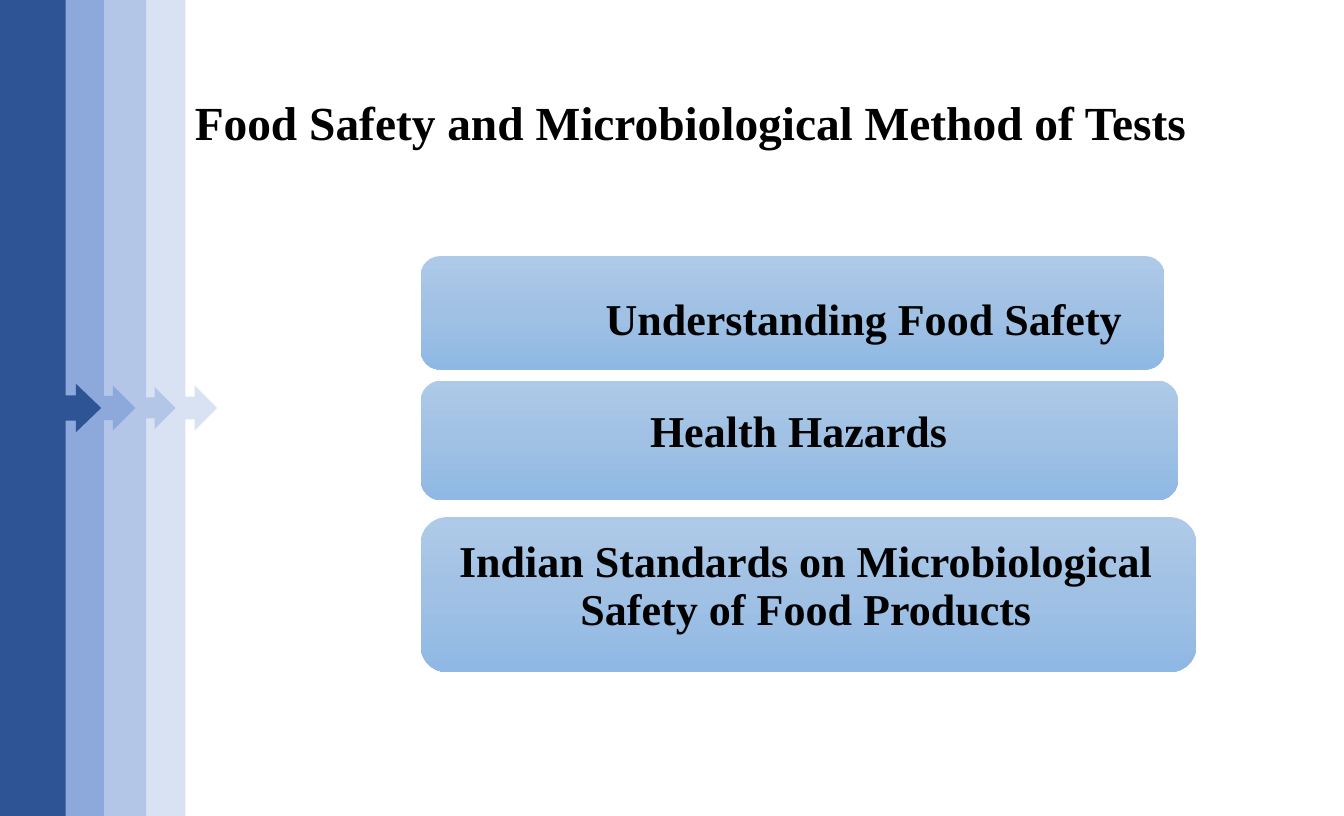
"""Builds the food safety agenda slide with its arrow band and three topic cards."""
from copy import deepcopy

from pptx import Presentation
from pptx import util as u
from pptx.dml.color import RGBColor
from pptx.enum import shapes, text
from pptx.oxml.ns import qn

SLIDE_SIZE = (11.02, 6.69)
TITLE = ("Food Safety and Microbiological Method of Tests", (1.04, 0.66, 9.24, 0.73))
ARROW_BANDS = [
    (1.04, 0.74, "D8E2F3", (0.25, 0.25, 0.25, 0.65)),
    (0.75, 0.69, "B3C6E7", (0.25, 0.25, 0.25, 0.65)),
    (0.37, 0.74, "8DA9DB", (0.27, 0.25, 0.25, 0.65)),
    (0, 0.83, "2F5496", (0.25, 0.24, 0.25, 0.65)),
]
CARD_LEFT = 3.45
CARDS = [
    ("Understanding Food Safety", (2.1, 6.1, 0.93), (3.54, 2.15, 7.09, 0.97)),
    ("Health Hazards", (3.12, 6.21, 0.98), (3.54, 3.17, 6.02, 0.76)),
    ("Indian Standards on Microbiological Safety of Food Products",
     (4.24, 6.36, 1.27), (3.53, 4.24, 6.16, 1.15)),
]
THEME = {
    "font": "Times New Roman",
    "ink": "000000",
    "title_size": 28,
    "card_size": 26,
    "card_gradient": [(0, "AFCAE9"), (0.5, "A0C1E4"), (1, "8FB8E4")],
}


def inches(box):
    return [u.Inches(length) for length in box]


def add_shape(slide, kind, box, adjustments):
    shape = slide.shapes.add_shape(kind, *inches(box))
    shape.shadow.inherit = False
    shape.line.fill.background()
    for index, value in enumerate(adjustments):
        shape.adjustments[index] = value
    return shape


def add_label(slide, words, box, size, inset_x, inset_y):
    frame = slide.shapes.add_textbox(*inches(box)).text_frame
    frame.word_wrap = True
    frame.vertical_anchor = text.MSO_ANCHOR.MIDDLE
    frame.margin_left = frame.margin_right = u.Inches(inset_x)
    frame.margin_top = frame.margin_bottom = u.Inches(inset_y)
    frame.text = words
    paragraph = frame.paragraphs[0]
    paragraph.alignment = text.PP_ALIGN.CENTER
    paragraph.line_spacing = 0.9
    font = paragraph.runs[0].font
    font.name, font.size, font.bold = THEME["font"], u.Pt(size), True
    font.color.rgb = RGBColor.from_string(THEME["ink"])


def fill_card(card):
    card.fill.gradient()
    card.fill.gradient_angle = 270
    stop_list = next(card._element.iter(qn("a:gsLst")))
    stop_list.insert(1, deepcopy(stop_list[0]))
    for stop, (position, color) in zip(card.fill.gradient_stops, THEME["card_gradient"]):
        stop.position = position
        stop.color.rgb = RGBColor.from_string(color)


def main():
    presentation = Presentation()
    presentation.slide_width, presentation.slide_height = inches(SLIDE_SIZE)
    slide = presentation.slides.add_slide(presentation.slide_layouts[6])

    add_label(slide, *TITLE, THEME["title_size"], 0.1, 0.05)
    for left, width, color, adjustments in ARROW_BANDS:
        band = add_shape(slide, shapes.MSO_SHAPE.RIGHT_ARROW_CALLOUT,
                         (left, 0, width, SLIDE_SIZE[1]), adjustments)
        band.fill.solid()
        band.fill.fore_color.rgb = RGBColor.from_string(color)
    for words, (top, width, height), label_box in CARDS:
        card = add_shape(slide, shapes.MSO_SHAPE.ROUNDED_RECTANGLE,
                         (CARD_LEFT, top, width, height), [0.17])
        fill_card(card)
        add_label(slide, words, label_box, THEME["card_size"], 0.12, 0.06)

    presentation.save("out.pptx")


if __name__ == "__main__":
    main()
